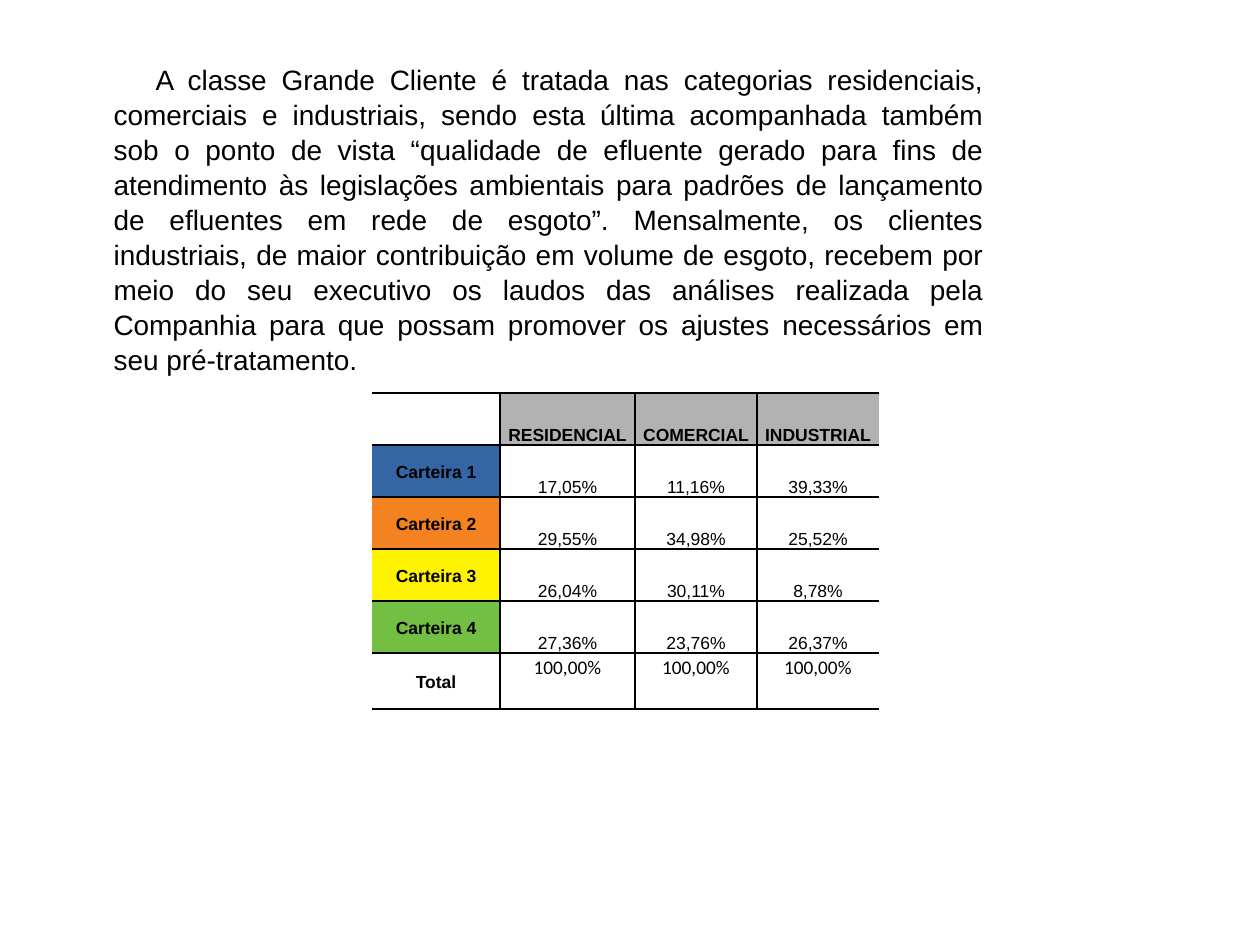
from pptx import Presentation
from pptx.dml.color import RGBColor
from pptx.enum.text import MSO_ANCHOR, PP_ALIGN
from pptx.oxml.ns import qn
from pptx.util import Pt
from lxml import etree

PX = 914400 // 126
CENTER, JUSTIFY = PP_ALIGN.CENTER, PP_ALIGN.JUSTIFY
TOP, MIDDLE, BOTTOM = MSO_ANCHOR.TOP, MSO_ANCHOR.MIDDLE, MSO_ANCHOR.BOTTOM

BLACK = RGBColor(0x00, 0x00, 0x00)
GRAY = RGBColor(0xB2, 0xB2, 0xB2)
BLUE = RGBColor(0x34, 0x65, 0xA4)
ORANGE = RGBColor(0xF5, 0x82, 0x20)
YELLOW = RGBColor(0xFF, 0xF2, 0x00)
GREEN = RGBColor(0x72, 0xBF, 0x44)

BODY = (
    "A classe Grande Cliente é tratada nas categorias residenciais, comerciais e "
    "industriais, sendo esta última acompanhada também sob o ponto de vista “qualidade "
    "de efluente gerado para fins de atendimento às legislações ambientais para padrões "
    "de lançamento de efluentes em rede de esgoto”. Mensalmente, os clientes industriais, "
    "de maior contribuição em volume de esgoto, recebem por meio do seu executivo os "
    "laudos das análises realizada pela Companhia para que possam promover os ajustes "
    "necessários em seu pré-tratamento."
)
ROWS = [
    ("", "RESIDENCIAL", "COMERCIAL", "INDUSTRIAL"),
    ("Carteira 1", "17,05%", "11,16%", "39,33%"),
    ("Carteira 2", "29,55%", "34,98%", "25,52%"),
    ("Carteira 3", "26,04%", "30,11%", "8,78%"),
    ("Carteira 4", "27,36%", "23,76%", "26,37%"),
    ("Total", "100,00%", "100,00%", "100,00%"),
]
LABEL_FILLS = [None, BLUE, ORANGE, YELLOW, GREEN, None]
COLUMN_WIDTHS = [128, 135, 122, 122]
ROW_HEIGHTS = [52] * 5 + [56]
TABLE_LEFT, TABLE_TOP = 372, 393


def set_font(font, name, size, bold=False):
    font.name, font.size, font.bold = name, Pt(size), bold
    font.color.rgb = BLACK


def set_borders(cell, visible):
    """Draw 1 pt black lines on the visible sides; clear the other sides."""
    properties = cell._tc.get_or_add_tcPr()
    for position, side in enumerate(("lnL", "lnR", "lnT", "lnB")):
        line = etree.Element(qn(f"a:{side}"), w=str(Pt(1)))
        if side in visible:
            solid = etree.SubElement(line, qn("a:solidFill"))
            etree.SubElement(solid, qn("a:srgbClr"), val=str(BLACK))
        else:
            etree.SubElement(line, qn("a:noFill"))
        properties.insert(position, line)


def add_body(slide):
    body = slide.placeholders[1]
    body.left, body.top, body.width, body.height = (
        value * PX for value in (54, 55, 942, 624))
    body.text_frame.text = BODY
    para = body.text_frame.paragraphs[0]
    properties = para._p.get_or_add_pPr()
    properties.set("marL", str(47 * PX))
    properties.set("indent", str(42 * PX))
    etree.SubElement(properties, qn("a:buNone"))
    para.alignment = JUSTIFY
    para.space_before = Pt(0)
    para.line_spacing = 1.04
    set_font(para.font, "Arial", 16)


def fill_cell(cell, row, column):
    is_total = row == len(ROWS) - 1
    color = LABEL_FILLS[row] if column == 0 else GRAY if row == 0 else None
    if color is None:
        cell.fill.background()
    else:
        cell.fill.solid()
        cell.fill.fore_color.rgb = color

    visible = {"lnT", "lnB"}
    if column > 0:
        visible.add("lnL")
    if column < len(COLUMN_WIDTHS) - 1:
        visible.add("lnR")
    set_borders(cell, visible)

    cell.margin_left = cell.margin_right = 6 * PX
    cell.margin_top = cell.margin_bottom = 0
    cell.vertical_anchor = MIDDLE if column == 0 else TOP if is_total else BOTTOM
    cell.text = ROWS[row][column]
    para = cell.text_frame.paragraphs[0]
    para.alignment = CENTER
    para.line_spacing = 1.15
    if is_total and column > 0:
        set_font(para.font, "Calibri", 11)
    else:
        set_font(para.font, "Arial", 10, bold=row == 0 or column == 0)


def add_share_table(slide):
    table = slide.shapes.add_table(
        len(ROWS), len(COLUMN_WIDTHS), TABLE_LEFT * PX, TABLE_TOP * PX,
        sum(COLUMN_WIDTHS) * PX, sum(ROW_HEIGHTS) * PX).table
    table.first_row = table.horz_banding = False
    for column, width in zip(table.columns, COLUMN_WIDTHS):
        column.width = width * PX
    for row, height in zip(table.rows, ROW_HEIGHTS):
        row.height = height * PX
    for row in range(len(ROWS)):
        for column in range(len(COLUMN_WIDTHS)):
            fill_cell(table.cell(row, column), row, column)


def main():
    deck = Presentation()
    deck.slide_width, deck.slide_height = 1260 * PX, 945 * PX
    slide = deck.slides.add_slide(deck.slide_layouts[1])
    title = slide.shapes.title
    title.element.getparent().remove(title.element)
    add_body(slide)
    add_share_table(slide)
    deck.save("out.pptx")


if __name__ == "__main__":
    main()
